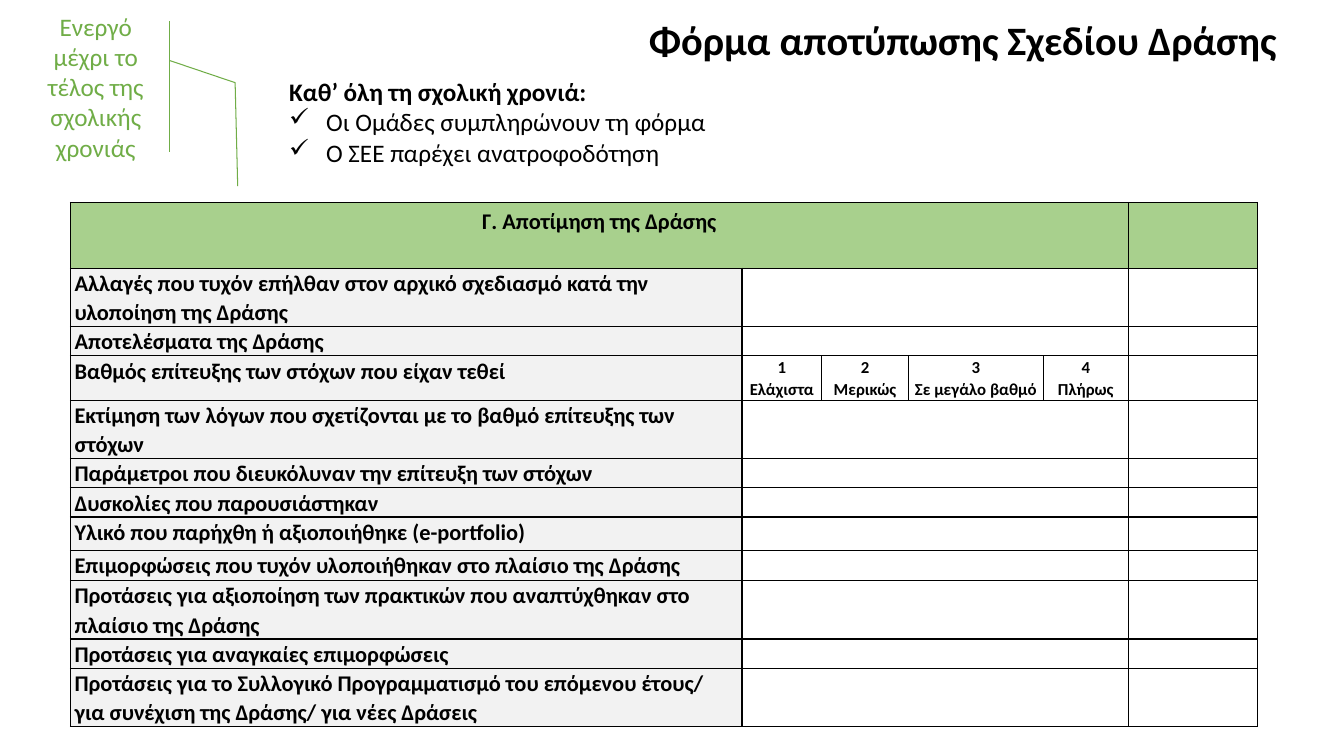
import pptx
import pptx.dml.color
import pptx.enum.shapes
import pptx.enum.text
import pptx.oxml
import pptx.oxml.ns
import pptx.util
from lxml import etree

Inches = pptx.util.Inches
Pt = pptx.util.Pt
ALIGN = pptx.enum.text.PP_ALIGN
ANCHOR = pptx.enum.text.MSO_ANCHOR

FONT = "Calibri"
BLACK, GREEN = "000000", "70AD47"
HEADER_FILL, LABEL_FILL = "A8D08D", "F2F2F2"

COLUMN_WIDTHS = [6.66, 0.79, 0.86, 1.34, 0.84, 1.28]
HEADER_HEIGHT = 0.65
FORM_TITLE = "Γ. Αποτίμηση της Δράσης"
GRADES = ["Ελάχιστα", "Μερικώς", "Σε μεγάλο βαθμό", "Πλήρως"]
GRADED_LABEL = "Βαθμός επίτευξης των στόχων που είχαν τεθεί"
FORM_ROWS = [
    ("Αλλαγές που τυχόν επήλθαν στον αρχικό σχεδιασμό κατά την υλοποίηση της Δράσης", 0.58),
    ("Αποτελέσματα της Δράσης", 0.29),
    (GRADED_LABEL, 0.44),
    ("Εκτίμηση των λόγων που σχετίζονται με το βαθμό επίτευξης των στόχων", 0.58),
    ("Παράμετροι που διευκόλυναν την επίτευξη των στόχων", 0.29),
    ("Δυσκολίες που παρουσιάστηκαν", 0.29),
    ("Υλικό που παρήχθη ή αξιοποιήθηκε (e-portfolio)", 0.33),
    ("Επιμορφώσεις που τυχόν υλοποιήθηκαν στο πλαίσιο της Δράσης", 0.3),
    ("Προτάσεις για αξιοποίηση των πρακτικών που αναπτύχθηκαν στο πλαίσιο της Δράσης", 0.58),
    ("Προτάσεις για αναγκαίες επιμορφώσεις", 0.29),
    ("Προτάσεις για το Συλλογικό Προγραμματισμό του επόμενου έτους/ "
     "για συνέχιση της Δράσης/ για νέες Δράσεις", 0.58),
]


def rgb(color):
    """Turn a hex string into a colour."""
    return pptx.dml.color.RGBColor.from_string(color)


def write(frame, lines, size, color=BLACK, bold=False, align=ALIGN.LEFT, spacing=None):
    """Write each line as one paragraph with one run."""
    for index, line in enumerate(lines):
        paragraph = frame.paragraphs[0] if index == 0 else frame.add_paragraph()
        paragraph.alignment = align
        paragraph.line_spacing = spacing
        run = paragraph.add_run()
        run.text = line
        run.font.name = FONT
        run.font.size = Pt(size)
        run.font.bold = bold
        run.font.color.rgb = rgb(color)


def add_title(slide, left, top, width, height):
    """Place the slide title."""
    frame = slide.shapes.add_textbox(
        Inches(left), Inches(top), Inches(width), Inches(height)).text_frame
    frame.word_wrap = True
    frame.vertical_anchor = ANCHOR.MIDDLE
    write(frame, ["Φόρμα αποτύπωσης Σχεδίου Δράσης"], 28.8,
          bold=True, align=ALIGN.CENTER, spacing=0.9)


def add_year_tasks(slide, left, top, width, height):
    """Place the heading and the ticked tasks of the school year."""
    frame = slide.shapes.add_textbox(
        Inches(left), Inches(top), Inches(width), Inches(height)).text_frame
    frame.word_wrap = True
    write(frame, ["Καθ’ όλη τη σχολική χρονιά:", " Οι Ομάδες συμπληρώνουν τη φόρμα",
                  " Ο ΣΕΕ παρέχει ανατροφοδότηση"], 18)
    heading, *tasks = frame.paragraphs
    heading.runs[0].font.bold = True
    for task in tasks:
        properties = task._p.get_or_add_pPr()
        properties.set("marL", str(Inches(0.31)))
        properties.set("indent", str(-Inches(0.31)))
        bullet = etree.SubElement(properties, pptx.oxml.ns.qn("a:buChar"))
        bullet.set("char", "✓")


def add_deadline_callout(slide, left, top, width, height):
    """Place the green callout with its accent bar and bent leader."""
    callout = slide.shapes.add_shape(
        pptx.enum.shapes.MSO_SHAPE.LINE_CALLOUT_2_ACCENT_BAR,
        Inches(left), Inches(top), Inches(width), Inches(height))
    for index, value in enumerate([0.3, 1.07, 0.47, 1.58, 1.26, 1.6]):
        callout.adjustments[index] = value
    callout.shadow.inherit = False
    callout.fill.background()
    callout.line.color.rgb = rgb(GREEN)
    callout.line.width = Pt(0.75)
    callout.text_frame.word_wrap = True
    callout.text_frame.vertical_anchor = ANCHOR.MIDDLE
    write(callout.text_frame, ["Ενεργό μέχρι το τέλος της σχολικής χρονιάς"], 18,
          color=GREEN, align=ALIGN.CENTER)


def format_cell(cell, fill=None):
    """Give a cell its margins, black borders, fill and small empty line."""
    cell.margin_left = cell.margin_right = Inches(0.04)
    cell.margin_top = cell.margin_bottom = 0
    for side in ("lnL", "lnR", "lnT", "lnB"):
        cell._tc.get_or_add_tcPr().append(pptx.oxml.parse_xml(
            f'<a:{side} {pptx.oxml.ns.nsdecls("a")} w="{Pt(1)}">'
            f'<a:solidFill><a:srgbClr val="{BLACK}"/></a:solidFill></a:{side}>'))
    if fill:
        cell.fill.solid()
        cell.fill.fore_color.rgb = rgb(fill)
    else:
        cell.fill.background()
    if not cell.text_frame.text:
        ending = etree.SubElement(
            cell.text_frame.paragraphs[0]._p, pptx.oxml.ns.qn("a:endParaRPr"))
        ending.set("sz", "1200")


def add_review_form(slide, left, top):
    """Place the form table, one row for each question."""
    heights = [HEADER_HEIGHT] + [height for _, height in FORM_ROWS]
    form = slide.shapes.add_table(
        len(heights), len(COLUMN_WIDTHS), Inches(left), Inches(top),
        Inches(sum(COLUMN_WIDTHS)), Inches(sum(heights))).table
    form.first_row = form.horz_banding = False
    for column, width in zip(form.columns, COLUMN_WIDTHS):
        column.width = Inches(width)
    for row, height in zip(form.rows, heights):
        row.height = Inches(height)

    form.cell(0, 0).merge(form.cell(0, 4))
    write(form.cell(0, 0).text_frame, [FORM_TITLE], 16,
          bold=True, align=ALIGN.CENTER, spacing=1.2)
    for index, (label, _) in enumerate(FORM_ROWS, start=1):
        write(form.cell(index, 0).text_frame, [label], 16, bold=True, spacing=1.07)
        if label == GRADED_LABEL:
            for grade, name in enumerate(GRADES, start=1):
                write(form.cell(index, grade).text_frame, [str(grade), name], 12,
                      bold=True, align=ALIGN.CENTER, spacing=1.07)
        else:
            form.cell(index, 1).merge(form.cell(index, 4))

    for row_index, row in enumerate(form.rows):
        for column_index, cell in enumerate(row.cells):
            label_fill = LABEL_FILL if column_index == 0 else None
            format_cell(cell, HEADER_FILL if row_index == 0 else label_fill)


def main():
    """Build the slide and save it."""
    deck = pptx.Presentation()
    deck.slide_width, deck.slide_height = Inches(13.33), Inches(7.5)
    slide = deck.slides.add_slide(deck.slide_layouts[6])
    add_title(slide, 6.19, 0.14, 6.72, 0.57)
    add_review_form(slide, 0.7, 2.01)
    add_year_tasks(slide, 2.77, 0.71, 4.9, 1.01)
    add_deadline_callout(slide, 0.31, 0.21, 1.28, 1.3)
    deck.save("out.pptx")


if __name__ == "__main__":
    main()
